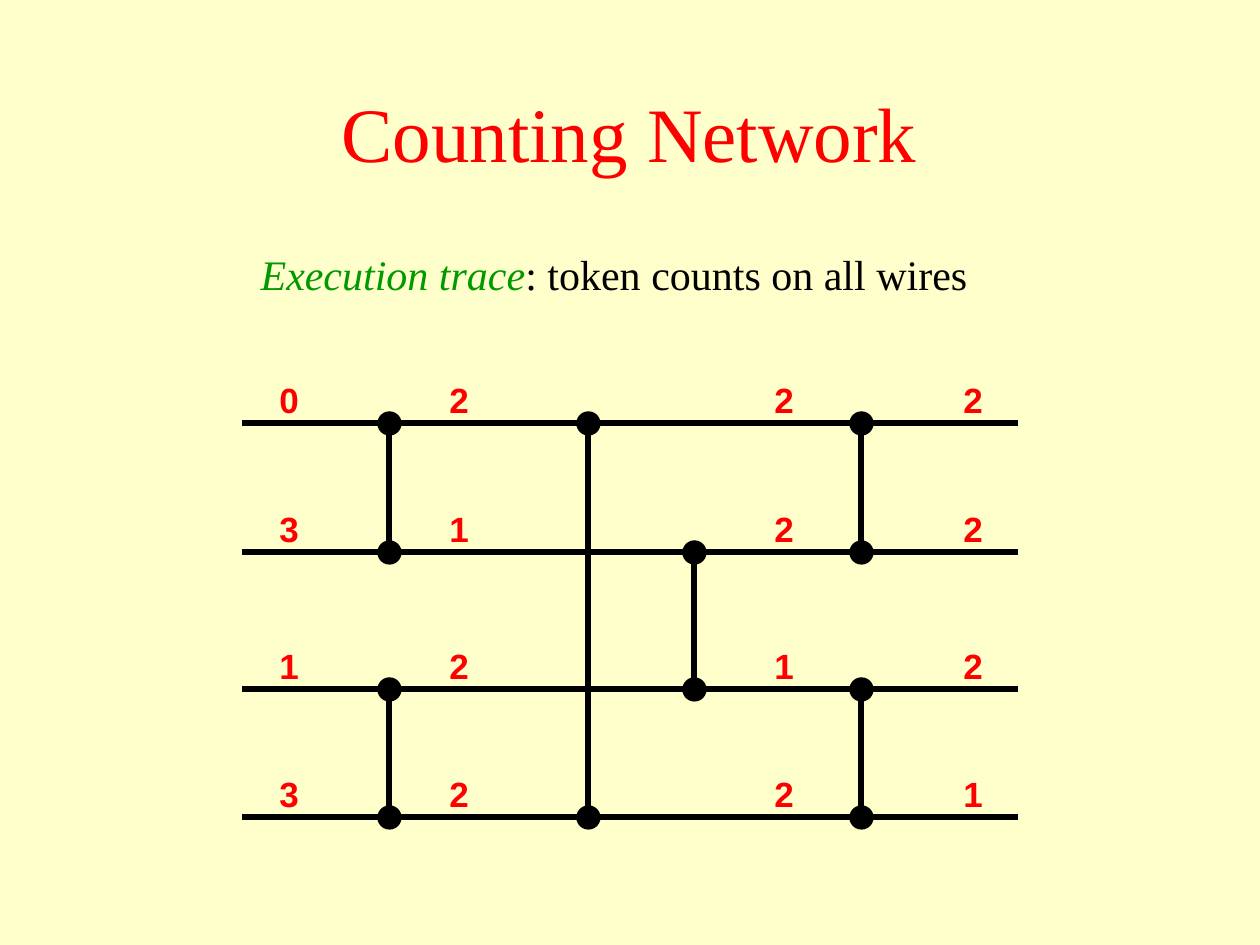
"""Build a slide that traces token counts through a four-wire counting network."""
from lxml.etree import SubElement
from pptx import Presentation
from pptx.dml.color import RGBColor
from pptx.enum.shapes import MSO_CONNECTOR as Connector, MSO_SHAPE as Shape
from pptx.enum.text import MSO_ANCHOR as Anchor, MSO_AUTO_SIZE as AutoSize, PP_ALIGN as Align
from pptx.oxml.ns import qn
from pptx.util import Emu, Pt

PX = 914400 // 126
RED, GREEN, BLACK, CREAM = "FF0000", "009900", "000000", "FFFFCC"
SERIF, SANS = "Times New Roman", "Arial"

WIRES = [423, 552, 689, 817]
WIRE_LEFT, WIRE_RIGHT = 242, 1018
BALANCERS = [(389, 0, 1), (389, 2, 3), (588, 0, 3), (694, 1, 2), (861, 0, 1), (861, 2, 3)]
DOT = 23
STAGES = [(267, "0313"), (437, "2122"), (762, "2212"), (951, "2221")]
COUNT_RISE = 51


def px(*lengths):
    """Turn pixel lengths into EMU."""
    return [Emu(length * PX) for length in lengths]


def rgb(hex_code):
    """Turn a hex string into a colour."""
    return RGBColor.from_string(hex_code)


def add_line(slide, x1, y1, x2, y2):
    """Draw a thick black line without a shadow."""
    line = slide.shapes.add_connector(Connector.STRAIGHT, *px(x1, y1, x2, y2))
    line.line.color.rgb = rgb(BLACK)
    line.line.width = Pt(3)
    SubElement(line._element.spPr, qn("a:effectLst"))


def add_dot(slide, x, y):
    """Draw a black dot centred on a point."""
    dot = slide.shapes.add_shape(Shape.OVAL, *px(x - DOT // 2, y - DOT // 2, DOT, DOT))
    dot.shadow.inherit = False
    dot.fill.solid()
    dot.fill.fore_color.rgb = rgb(BLACK)
    dot.line.color.rgb = rgb(BLACK)
    dot.line.width = Pt(0.75)


def add_balancer(slide, x, top, bottom):
    """Join two wires with a vertical line that ends in dots."""
    add_line(slide, x, top, x, bottom)
    for y in (top, bottom):
        add_dot(slide, x, y)


def add_text(parent, box, runs, size, font, align=Align.CENTER):
    """Add a text box with one paragraph of coloured runs and return it."""
    text_box = parent.shapes.add_textbox(*px(*box))
    text_box.text_frame.word_wrap = True
    paragraph = text_box.text_frame.paragraphs[0]
    paragraph.alignment = align
    paragraph.font.size = Pt(size)
    paragraph.font.name = font
    for wording, colour in runs:
        run = paragraph.add_run()
        run.text = wording
        run.font.color.rgb = rgb(colour)
    return text_box


def add_stage(slide, left, counts):
    """Group the token counts of one stage, one above each wire."""
    stage = slide.shapes.add_group_shape()
    for wire, count in zip(WIRES, counts):
        label = add_text(stage, (left, wire - COUNT_RISE, 45, 54), [(count, RED)], 20, SANS, Align.LEFT)
        label.text_frame.word_wrap = False
        label.text_frame.auto_size = AutoSize.SHAPE_TO_FIT_TEXT
        label.text_frame.paragraphs[0].font.bold = True


def main():
    """Build and save the slide."""
    deck = Presentation()
    deck.slide_width, deck.slide_height = px(1260, 945)
    slide = deck.slides.add_slide(deck.slide_layouts[6])
    slide.background.fill.solid()
    slide.background.fill.fore_color.rgb = rgb(CREAM)

    for wire in WIRES:
        add_line(slide, WIRE_LEFT, wire, WIRE_RIGHT, wire)
    for x, upper, lower in BALANCERS:
        add_balancer(slide, x, WIRES[upper], WIRES[lower])
    for left, counts in STAGES:
        add_stage(slide, left, counts)

    caption_runs = [("Execution trace", GREEN), (": token counts on all wires", BLACK)]
    caption = add_text(slide, (42, 242, 1144, 94), caption_runs, 24, SERIF).text_frame.paragraphs[0]
    caption.space_before = Pt(3)
    caption.runs[0].font.italic = True

    title = add_text(slide, (94, 53, 1071, 158), [("Counting Network", RED)], 44, SERIF)
    title.text_frame.vertical_anchor = Anchor.MIDDLE

    deck.save("out.pptx")


if __name__ == "__main__":
    main()
